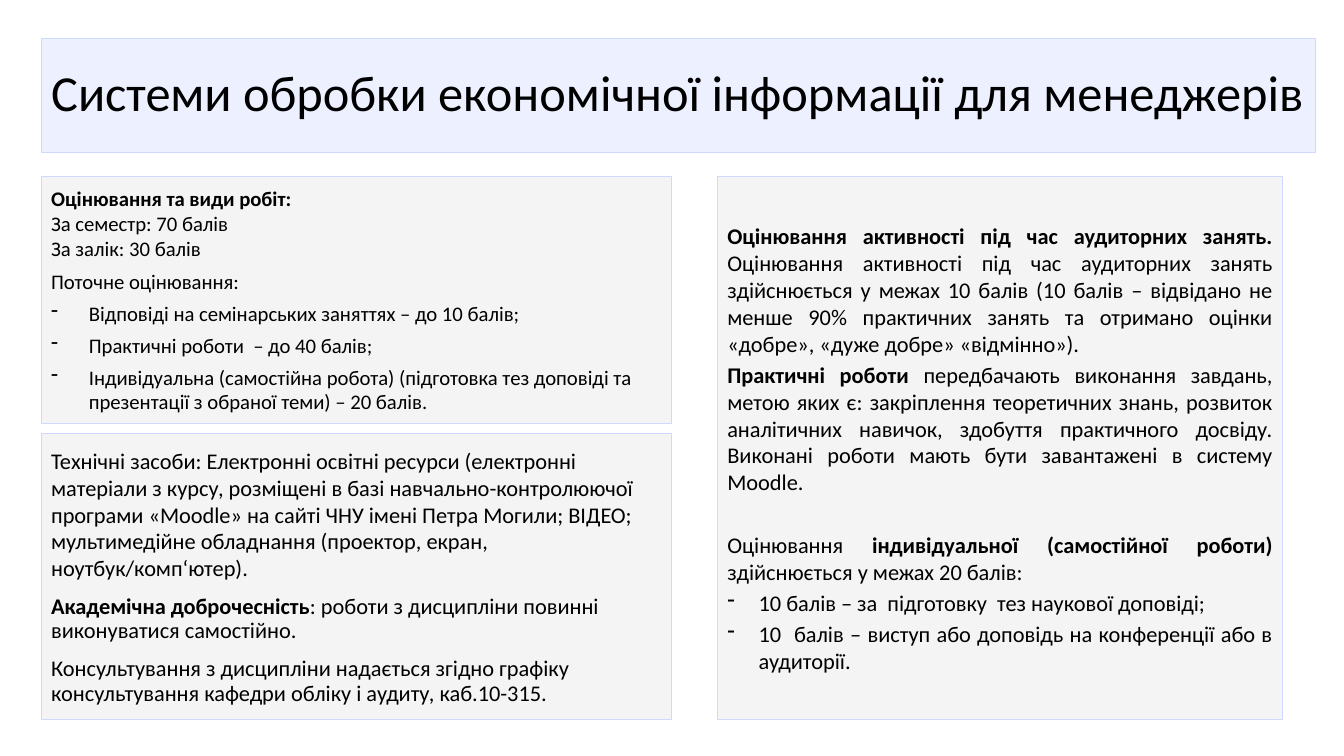
from lxml.etree import SubElement
from pptx import Presentation
from pptx.dml.color import RGBColor
from pptx.enum.shapes import MSO_SHAPE as Shape
from pptx.enum.text import MSO_ANCHOR as Anchor, PP_ALIGN as Align
from pptx.oxml.ns import qn
from pptx.util import Cm, Pt

FONT = "Calibri"
BLACK = RGBColor(0x00, 0x00, 0x00)
TITLE_FILL = RGBColor(0xE5, 0xEB, 0xFF)
PANEL_FILL = RGBColor(0xF0, 0xF0, 0xF0)
BORDER = RGBColor(0xCD, 0xD9, 0xFF)

# A paragraph is (spans, space before in points, line spacing, bulleted);
# a span is (text, bold).
TITLE = [([("Системи обробки економічної інформації для менеджерів", False)], 0, 0.9, False)]

GRADING = [
    ([("Оцінювання та види робіт:", True)], 0, 1.0, False),
    ([("За семестр: 70 балів", False)], 0, 1.0, False),
    ([("За залік: 30 балів", False)], 0, 1.0, False),
    ([("Поточне оцінювання:", False)], 6, 1.0, False),
    ([("Відповіді на семінарських заняттях – до 10 балів;", False)], 5, 1.0, True),
    ([("Практичні роботи  – до 40 балів;", False)], 5, 1.0, True),
    ([("Індивідуальна (самостійна робота) (підготовка тез доповіді та "
       "презентації з обраної теми) – 20 балів.", False)], 5, 1.0, True),
]

RESOURCES = [
    ([("Технічні засоби: Електронні освітні ресурси (електронні матеріали з курсу, "
       "розміщені в базі навчально-контролюючої програми «Moodle» на сайті ЧНУ імені "
       "Петра Могили; ВІДЕО; мультимедійне обладнання (проектор, екран, "
       "ноутбук/комп‘ютер).", False)], 0, 1.0, False),
    ([("Академічна доброчесність", True),
      (": роботи з дисципліни повинні виконуватися самостійно.", False)], 10, 0.9, False),
    ([("Консультування з дисципліни надається згідно графіку консультування "
       "кафедри обліку і аудиту, каб.10-315.", False)], 10, 0.9, False),
]

ACTIVITY = [
    ([("Оцінювання активності під час аудиторних занять. ", True),
      ("Оцінювання активності під час аудиторних занять здійснюється у межах 10 балів "
       "(10 балів – відвідано не менше 90% практичних занять та отримано оцінки "
       "«добре», «дуже добре» «відмінно»).", False)], 0, 1.0, False),
    ([("Практичні роботи ", True),
      ("передбачають виконання завдань, метою яких є: закріплення теоретичних знань, "
       "розвиток аналітичних навичок, здобуття практичного досвіду. Виконані роботи "
       "мають бути завантажені в систему Moodle.", False)], 3, 1.0, False),
    ([("Оцінювання ", False), ("індивідуальної (самостійної роботи)", True),
      (" здійснюється у межах 20 балів:", False)], 25.5, 1.0, False),
    ([("10 балів – за  підготовку  тез наукової доповіді;", False)], 3, 1.0, True),
    ([("10  балів – виступ або доповідь на конференції або в аудиторії.", False)], 3, 1.0, True),
]

LEFT, TOP, BOTTOM = Cm(1.04), Cm(4.45), Cm(18.13)
LEFT_WIDTH, GRADING_HEIGHT, GAP = Cm(15.88), Cm(6.22), Cm(0.25)
RESOURCES_TOP = TOP + GRADING_HEIGHT + GAP


def add_bullet(para, indent):
    properties = para._p.get_or_add_pPr()
    properties.set("marL", str(indent))
    properties.set("indent", str(-indent))
    SubElement(properties, qn("a:buChar")).set("char", "-")


def add_panel(page, place, paragraphs, size, fill=PANEL_FILL, opacity=69,
              align=Align.LEFT, indent=Cm(0.95)):
    box = page.shapes.add_shape(Shape.RECTANGLE, *place)
    box.shadow.inherit = False
    box.fill.solid()
    box.fill.fore_color.rgb = fill
    color = box._element.spPr.find(qn("a:solidFill"))[0]
    SubElement(color, qn("a:alpha")).set("val", str(opacity * 1000))
    box.line.color.rgb = BORDER
    box.line.width = Pt(0.75)

    frame = box.text_frame
    frame.word_wrap = True
    frame.vertical_anchor = Anchor.MIDDLE
    for index, (spans, before, spacing, bulleted) in enumerate(paragraphs):
        para = frame.add_paragraph() if index else frame.paragraphs[0]
        if bulleted:
            add_bullet(para, indent)
        para.alignment = align
        para.space_before = Pt(before)
        para.line_spacing = spacing
        for text, bold in spans:
            span = para.add_run()
            span.text = text
            span.font.name = FONT
            span.font.size = Pt(size)
            span.font.bold = bold
            span.font.color.rgb = BLACK


def main():
    deck = Presentation()
    deck.slide_width, deck.slide_height = Cm(33.87), Cm(19.05)
    page = deck.slides.add_slide(deck.slide_layouts[6])
    add_panel(page, (LEFT, Cm(0.97), Cm(32.11), Cm(2.87)), TITLE, 36, TITLE_FILL, 70)
    add_panel(page, (LEFT, TOP, LEFT_WIDTH, GRADING_HEIGHT), GRADING, 14.8)
    add_panel(page, (LEFT, RESOURCES_TOP, LEFT_WIDTH, BOTTOM - RESOURCES_TOP), RESOURCES, 16)
    add_panel(page, (Cm(18.08), TOP, Cm(14.25), BOTTOM - TOP), ACTIVITY, 16,
              align=Align.JUSTIFY, indent=Cm(0.79))
    deck.save("out.pptx")


if __name__ == "__main__":
    main()
